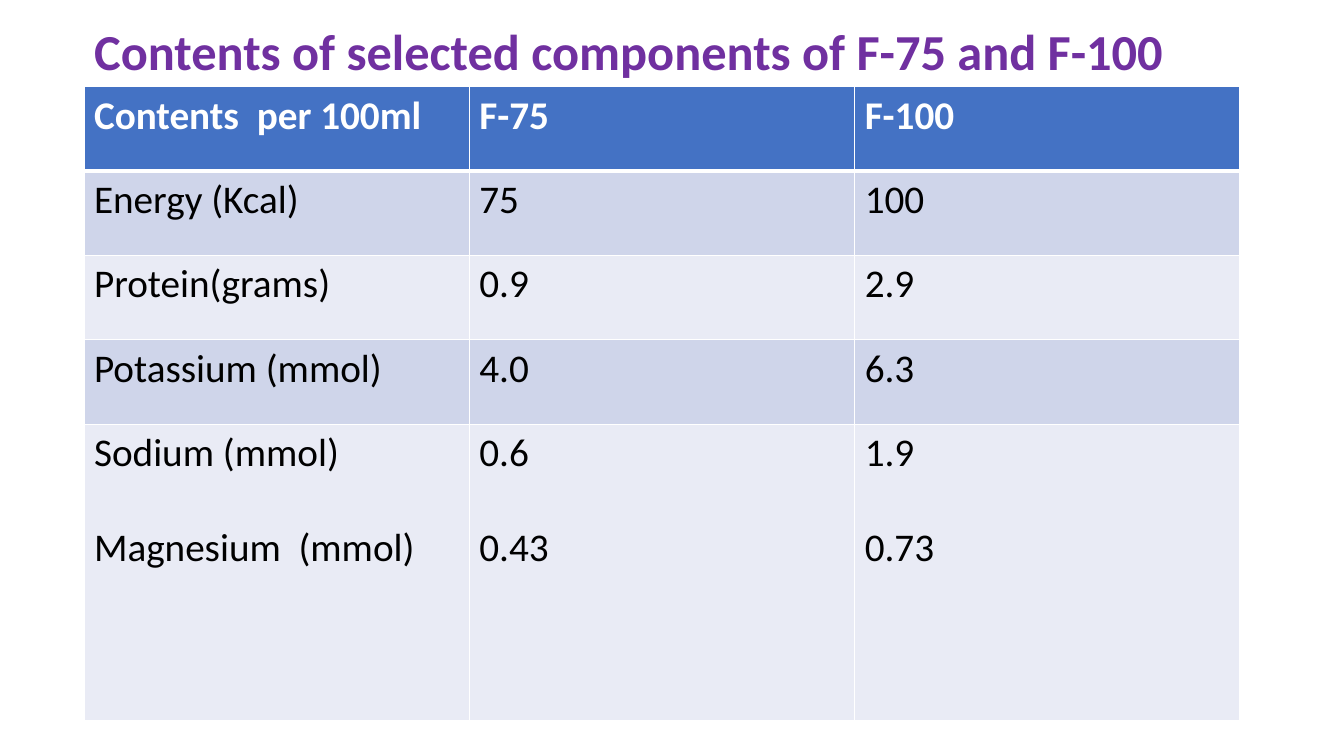
from lxml import etree
from pptx import Presentation
from pptx.dml.color import RGBColor
from pptx.enum.text import MSO_ANCHOR, PP_ALIGN
from pptx.oxml.ns import qn
from pptx.util import Pt

LEFT = PP_ALIGN.LEFT
MIDDLE = MSO_ANCHOR.MIDDLE
TITLE_ONLY = 5
FONT = "Calibri"
COLORS = {
    "title": "7030A0",
    "header": "4472C4",
    "odd": "CFD5EA",
    "even": "E9EBF5",
    "white": "FFFFFF",
    "text": "000000",
}
ROWS = [
    ("Contents  per 100ml", "F-75", "F-100"),
    ("Energy (Kcal)", "75", "100"),
    ("Protein(grams)", "0.9", "2.9"),
    ("Potassium (mmol)", "4.0", "6.3"),
    ("Sodium (mmol)\nMagnesium  (mmol)", "0.6\n0.43", "1.9\n0.73"),
]
ROW_HEIGHTS = [60.25] * 4 + [212]
COLUMN_WIDTHS = [275.25] * 3


class SlideBuilder:
    def __init__(self, prs):
        self.slide = prs.slides.add_slide(prs.slide_layouts[TITLE_ONLY])

    def style(self, p, size, color, bold):
        p.alignment = LEFT
        p.font.name = FONT
        p.font.size = Pt(size)
        p.font.bold = bold
        p.font.color.rgb = RGBColor.from_string(COLORS[color])

    def title(self, text, left, top, width, height):
        sp = self.slide.shapes.title
        sp.left, sp.top, sp.width, sp.height = map(Pt, (left, top, width, height))
        tf = sp.text_frame
        tf.text = text
        tf.word_wrap = True
        tf.vertical_anchor = MIDDLE
        p = tf.paragraphs[0]
        p.line_spacing = 0.9
        self.style(p, 36, "title", True)

    def borders(self, cell, bottom):
        tc_pr = cell._tc.get_or_add_tcPr()
        widths = {"lnL": 1, "lnR": 1, "lnT": 1, "lnB": bottom}
        for index, (side, width) in enumerate(widths.items()):
            ln = etree.Element(qn(f"a:{side}"), w=str(Pt(width)))
            fill = etree.SubElement(ln, qn("a:solidFill"))
            etree.SubElement(fill, qn("a:srgbClr"), val=COLORS["white"])
            tc_pr.insert(index, ln)

    def cell(self, cell, text, header, fill, bottom):
        cell.fill.solid()
        cell.fill.fore_color.rgb = RGBColor.from_string(COLORS[fill])
        self.borders(cell, bottom)
        tf = cell.text_frame
        tf.text = text
        for index, p in enumerate(tf.paragraphs):
            self.style(p, 28, "white" if header else "text", header)
            if index:
                p.space_before = Pt(34)

    def table(self, rows, left, top, widths, heights):
        frame = self.slide.shapes.add_table(
            len(rows), len(widths), Pt(left), Pt(top), Pt(sum(widths)), Pt(sum(heights))
        )
        table = frame.table
        for column, width in zip(table.columns, widths):
            column.width = Pt(width)
        for r, (values, height) in enumerate(zip(rows, heights)):
            table.rows[r].height = Pt(height)
            header = r == 0
            fill = "header" if header else "odd" if r % 2 else "even"
            for c, text in enumerate(values):
                self.cell(table.cell(r, c), text, header, fill, 3 if header else 1)


def main():
    prs = Presentation()
    prs.slide_width, prs.slide_height = Pt(960), Pt(540)
    s = SlideBuilder(prs)
    s.title("Contents of selected components of F-75 and F-100", 60, 15, 840, 47)
    s.table(ROWS, 60, 62, COLUMN_WIDTHS, ROW_HEIGHTS)
    prs.save("out.pptx")


if __name__ == "__main__":
    main()
